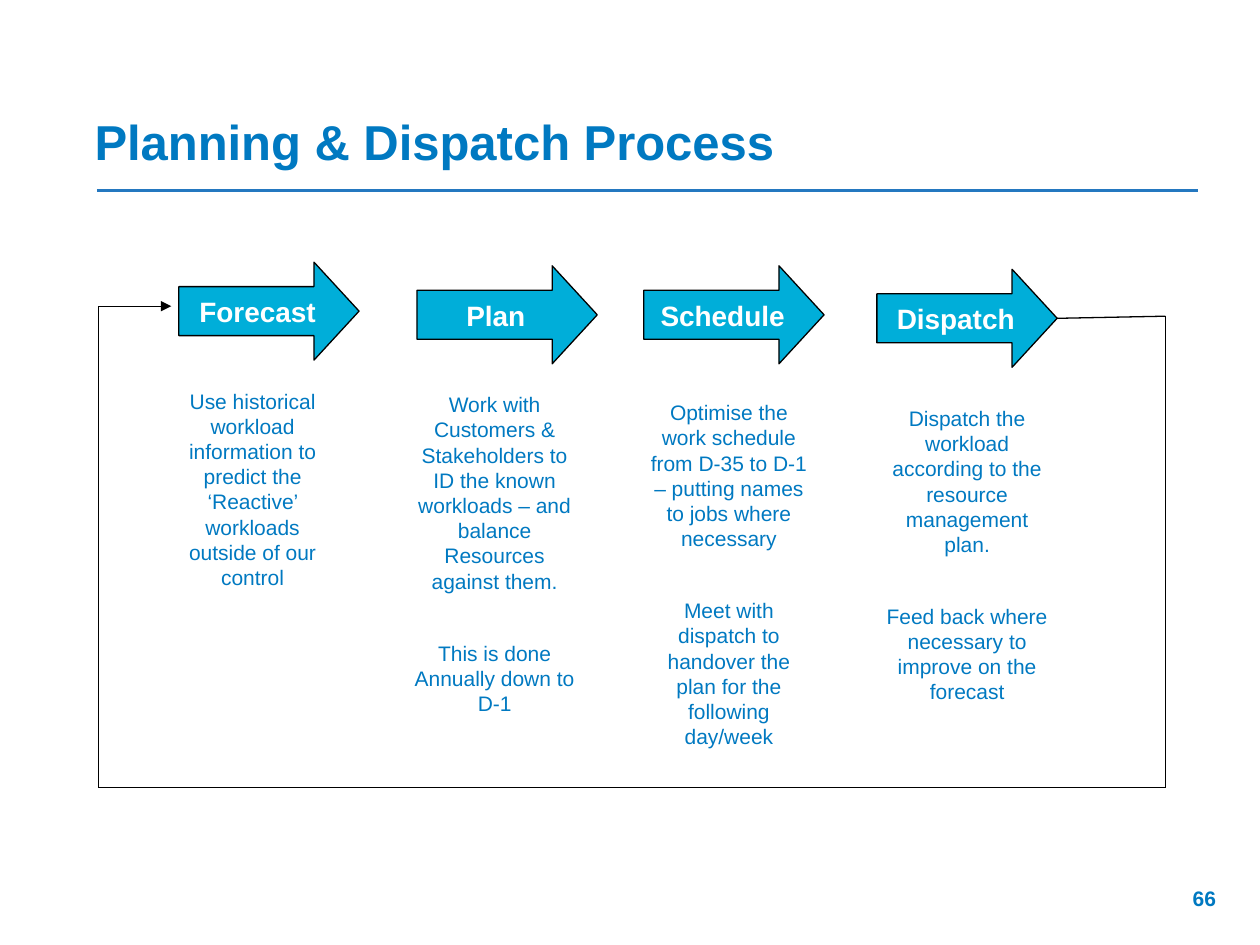
import pptx
import pptx.util
import pptx.dml.color
import pptx.enum.shapes
import pptx.enum.text
import pptx.oxml.ns
from lxml import etree

Pt = pptx.util.Pt
RGB = pptx.dml.color.RGBColor
Align = pptx.enum.text.PP_ALIGN
Anchor = pptx.enum.text.MSO_ANCHOR
qn = pptx.oxml.ns.qn

BLUE = RGB(0x00, 0x79, 0xC1)
RULE = RGB(0x24, 0x78, 0xC0)
CYAN = RGB(0x00, 0xAE, 0xD9)
BLACK = RGB(0, 0, 0)
WHITE = RGB(0xFF, 0xFF, 0xFF)


def style(para, size, color, bold, align):
    para.alignment = align
    para.font.name = "Arial"
    para.font.size = Pt(size)
    para.font.bold = bold
    para.font.color.rgb = color


def link(start, end, color, width):
    line = slide.shapes.add_connector(
        pptx.enum.shapes.MSO_CONNECTOR.STRAIGHT,
        Pt(start[0]), Pt(start[1]), Pt(end[0]), Pt(end[1]))
    line.line.color.rgb = color
    line.line.width = Pt(width)
    etree.SubElement(line._element.spPr, qn("a:effectLst"))
    return line


deck = pptx.Presentation()
deck.slide_width, deck.slide_height = Pt(720), Pt(540)
slide = deck.slides.add_slide(deck.slide_layouts[5])

# Title and rule
title = slide.shapes.title
title.left, title.top, title.width, title.height = Pt(46.8), Pt(59.8), Pt(637.2), Pt(41)
frame = title.text_frame
frame.text = "Planning & Dispatch Process"
frame.auto_size = pptx.enum.text.MSO_AUTO_SIZE.NONE
frame.vertical_anchor = Anchor.BOTTOM
style(frame.paragraphs[0], 28, BLUE, True, Align.LEFT)
link((55.4, 108.7), (684.7, 108.7), RULE, 1.5)

# Page number
page = slide.shapes.add_textbox(Pt(534.2), Pt(502.6), Pt(167.8), Pt(28.8))
page.text_frame.word_wrap = True
page.text_frame.text = "66"
style(page.text_frame.paragraphs[0], 12, BLUE, True, Align.RIGHT)

# Steps: name, arrow left and top, notes left, top and height, notes
steps = [
    ("Forecast", 102.2, 149.8, 90.7, 218.2, 122.4,
     ["Use historical workload information to predict the ‘Reactive’ "
      "workloads outside of our control"]),
    ("Plan", 238.3, 151.9, 229, 220.3, 194.4,
     ["Work with Customers & Stakeholders to ID the known workloads – and "
      "balance Resources against them.",
      "This is done Annually down to D-1"]),
    ("Schedule", 367.9, 151.9, 362.9, 224.9, 208.8,
     ["Optimise the work schedule from D-35 to D-1 – putting names to jobs "
      "where necessary",
      "Meet with dispatch to handover the plan for the following day/week"]),
    ("Dispatch", 501.1, 153.9, 499, 228.2, 180,
     ["Dispatch the workload according to the resource management plan.",
      "Feed back where necessary to improve on the forecast"]),
]
for name, left, top, x, y, height, notes in steps:
    arrow = slide.shapes.add_shape(
        pptx.enum.shapes.MSO_SHAPE.RIGHT_ARROW, Pt(left), Pt(top), Pt(103), Pt(56))
    arrow.adjustments[0], arrow.adjustments[1] = 0.5, 0.46
    arrow.shadow.inherit = False
    arrow.fill.solid()
    arrow.fill.fore_color.rgb = CYAN
    arrow.line.color.rgb = BLACK
    arrow.line.width = Pt(0.75)
    frame = arrow.text_frame
    frame.word_wrap = False
    frame.vertical_anchor = Anchor.MIDDLE
    frame.text = name
    style(frame.paragraphs[0], 16, WHITE, True, Align.CENTER)

    box = slide.shapes.add_textbox(Pt(x), Pt(y), Pt(107.3), Pt(height))
    frame = box.text_frame
    frame.word_wrap = True
    frame.text = "\n".join(notes)
    for i, para in enumerate(frame.paragraphs):
        para.line_spacing = Pt(14.4)
        para.space_before = Pt(26.7 if i else 0)
        style(para, 12, BLUE, False, Align.CENTER)

# Feedback loop from the last arrow back to the first
route = [(604.1, 181.9), (666, 180.7), (666, 450), (56.2, 450), (56.2, 175), (97.9, 175)]
lines = [link(a, b, BLACK, 0.75) for a, b in zip(route, route[1:])]
lines[0].begin_connect(arrow, 3)
etree.SubElement(lines[-1].line._get_or_add_ln(), qn("a:tailEnd"), type="triangle")

deck.save("out.pptx")
